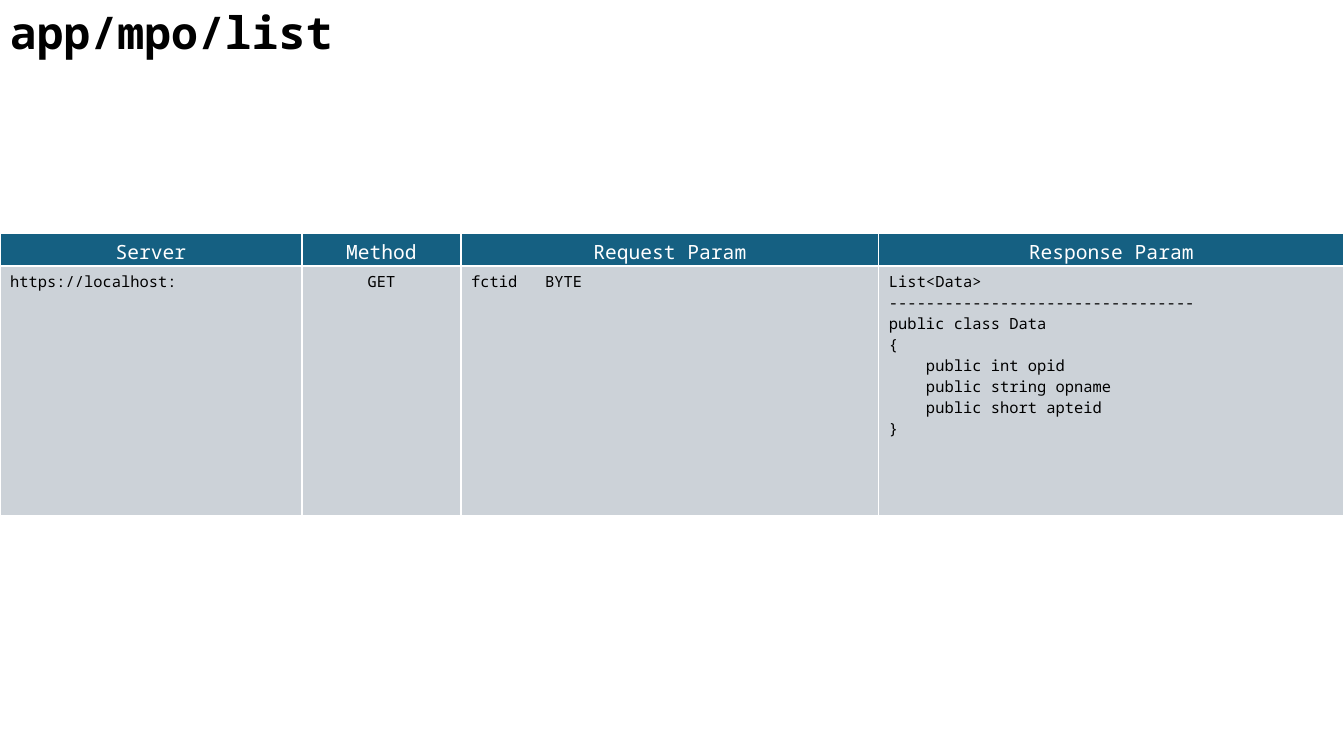
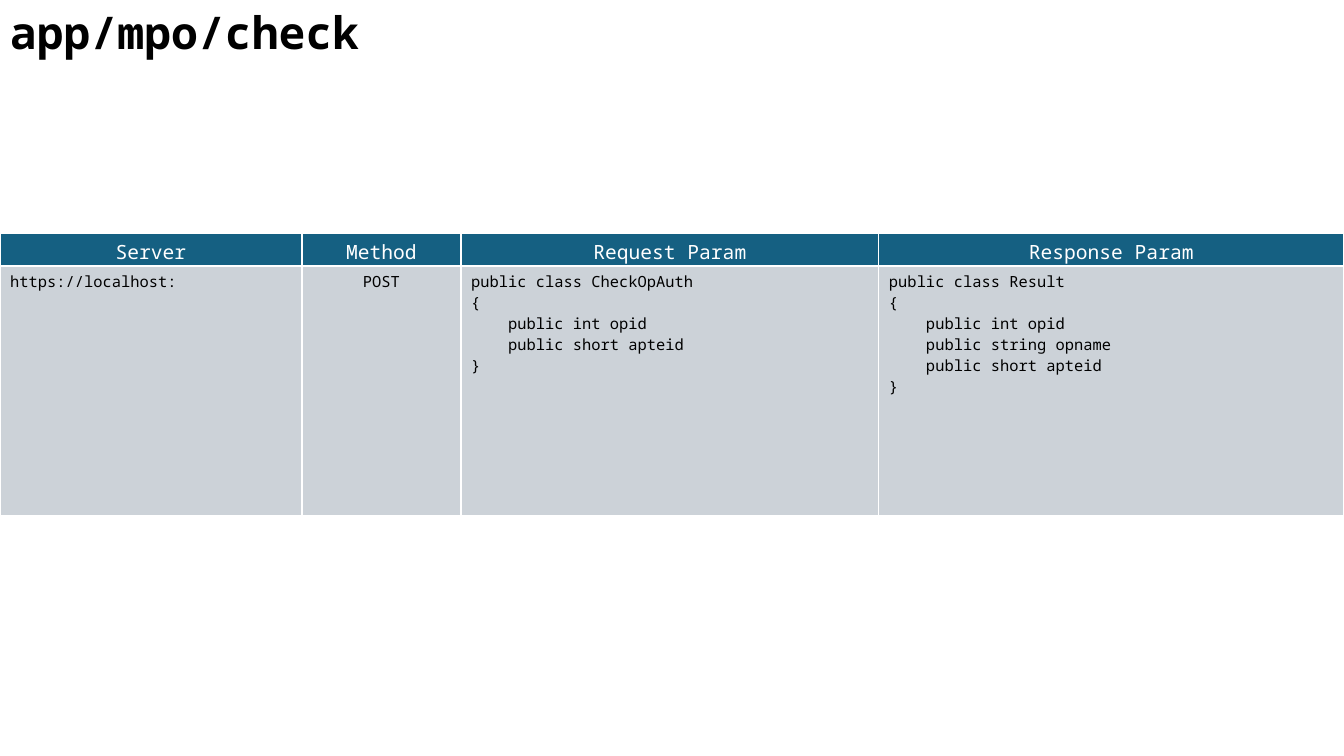
"""Builds two API reference slides, each with a title and an endpoint table."""
from lxml import etree
from pptx import Presentation
from pptx import util as u
from pptx.dml.color import RGBColor
from pptx.enum import text
from pptx.oxml.ns import qn

EMU_PER_PX = 914400 / 100.8
FONT = "Noto Sans Mono"
COLORS = {"ink": "000000", "paper": "FFFFFF", "header": "156082", "body": "CCD2D8"}
HEADINGS = ["Server", "Method", "Request Param", "Response Param"]
COLUMN_WIDTHS = [302, 159, 418, 465]
ROW_HEIGHTS = [33, 250]
CENTER = text.PP_ALIGN.CENTER
LEFT = text.PP_ALIGN.LEFT


def px(length):
    return u.Emu(round(length * EMU_PER_PX))


def write(frame, content, size, color="ink", bold=False, align=LEFT, tab=None):
    for index, line in enumerate(content.split("\n")):
        paragraph = frame.paragraphs[0] if index == 0 else frame.add_paragraph()
        paragraph.alignment = align
        if tab:
            stops = etree.SubElement(paragraph._p.get_or_add_pPr(), qn("a:tabLst"))
            etree.SubElement(stops, qn("a:tab"), pos=str(px(tab)), algn="l")
        run = paragraph.add_run()
        run.text = line
        run.font.name = FONT
        run.font.size = u.Pt(size)
        run.font.bold = bold
        run.font.color.rgb = RGBColor.from_string(COLORS[color])


class Deck:
    def __init__(self):
        self.presentation = Presentation()
        self.presentation.slide_width = px(1344)
        self.presentation.slide_height = px(756)
        self.slide = None

    def add_slide(self):
        self.slide = self.presentation.slides.add_slide(self.presentation.slide_layouts[6])

    def title(self, content):
        frame = self.slide.shapes.add_textbox(0, 0, px(953), px(65)).text_frame
        frame.word_wrap = True
        frame.auto_size = text.MSO_AUTO_SIZE.SHAPE_TO_FIT_TEXT
        write(frame, content, 32, bold=True)

    def cell_style(self, cell, fill):
        properties = cell._tc.get_or_add_tcPr()
        for side in ("lnL", "lnR", "lnT", "lnB"):
            border = etree.SubElement(properties, qn(f"a:{side}"), w=str(u.Pt(1)))
            solid = etree.SubElement(border, qn("a:solidFill"))
            etree.SubElement(solid, qn("a:srgbClr"), val=COLORS["paper"])
        cell.fill.solid()
        cell.fill.fore_color.rgb = RGBColor.from_string(COLORS[fill])

    def endpoint_table(self, details):
        table = self.slide.shapes.add_table(
            2, len(HEADINGS), 0, px(233), px(sum(COLUMN_WIDTHS)), px(sum(ROW_HEIGHTS))
        ).table
        table.horz_banding = False
        for row, height in zip(table.rows, ROW_HEIGHTS):
            row.height = px(height)
        for index, (heading, detail) in enumerate(zip(HEADINGS, details)):
            table.columns[index].width = px(COLUMN_WIDTHS[index])
            header, body = table.cell(0, index), table.cell(1, index)
            self.cell_style(header, "header")
            self.cell_style(body, "body")
            header.margin_bottom = 0
            write(header.text_frame, heading, 14, color="paper", align=CENTER)
            write(body.text_frame, detail, 11,
                  align=CENTER if heading == "Method" else LEFT,
                  tab=74 if "\t" in detail else None)


def code_class(name, *fields):
    members = [f"    public {field}" for field in fields]
    return "\n".join([f"public class {name}", "{", *members, "}"])


def main():
    operation = ["int opid", "string opname", "short apteid"]
    endpoints = [
        ("app/mpo/list", "GET", "fctid\tBYTE",
         "\n".join(["List<Data>", "-" * 33, code_class("Data", *operation)])),
        ("app/mpo/check", "POST",
         code_class("CheckOpAuth", "int opid", "short apteid"),
         code_class("Result", *operation)),
    ]
    deck = Deck()
    for route, method, request, response in endpoints:
        deck.add_slide()
        deck.title(route)
        deck.endpoint_table(["https://localhost:", method, request, response])
    deck.presentation.save("out.pptx")


if __name__ == "__main__":
    main()
